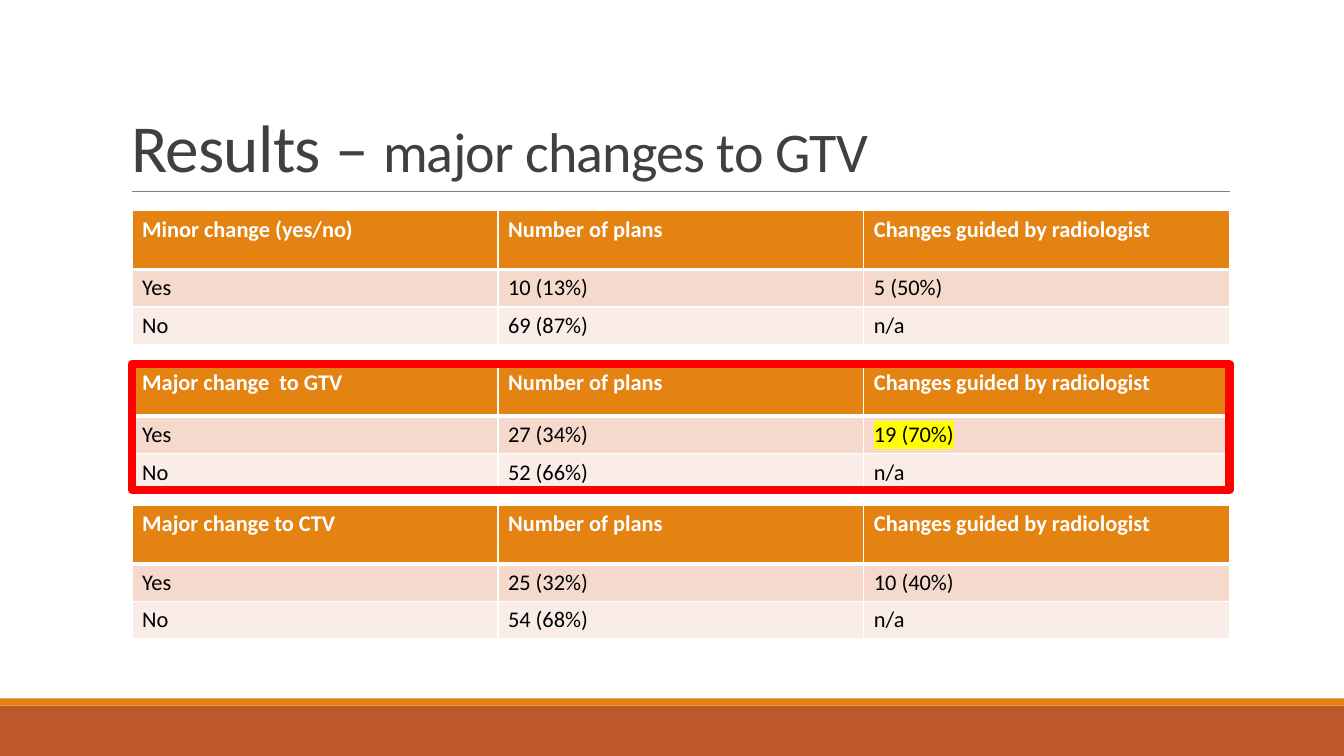
"""Build the results slide on major changes to GTV."""
from lxml import etree
from pptx import Presentation
from pptx.dml.color import RGBColor
from pptx.enum.shapes import MSO_CONNECTOR, MSO_SHAPE
from pptx.enum.text import MSO_ANCHOR, MSO_AUTO_SIZE, PP_ALIGN
from pptx.oxml.ns import qn
from pptx.util import Cm, Pt

RECT = MSO_SHAPE.RECTANGLE
STRAIGHT = MSO_CONNECTOR.STRAIGHT
BOTTOM = MSO_ANCHOR.BOTTOM
NO_AUTOFIT = MSO_AUTO_SIZE.NONE
LEFT = PP_ALIGN.LEFT

ORANGE, RUST, RED, WHITE = "E48312", "BD582C", "FF0000", "FFFFFF"
ROW_FILLS = [ORANGE, "F5D9CC", "FAEDE7"]
TABLE_LEFT, COL_W, ROW_H = 3.33, 9.22, 0.94
TABLE_W = 3 * COL_W
GTV_TOP, GTV_H = 9.17, 3.18
HEADINGS = ["Number of plans", "Changes guided by radiologist"]
TABLES = [
    ("Minor change (yes/no)", 5.31, 1.48, ["10 (13%)", "5 (50%)"], "69 (87%)"),
    ("Major change  to GTV", GTV_TOP, 1.32, ["27 (34%)", "19 (70%)"], "52 (66%)"),
    ("Major change to CTV", 12.73, 1.48, ["25 (32%)", "10 (40%)"], "54 (68%)"),
]
HIGHLIGHTED = "19 (70%)"


def rgb(color):
    return RGBColor.from_string(color)


def add_color(parent, color):
    etree.SubElement(parent, qn("a:srgbClr"), val=color)


prs = Presentation()
prs.slide_width, prs.slide_height = Cm(33.87), Cm(19.05)
s = prs.slides.add_slide(prs.slide_layouts[5])

for top, height, color in [(17.78, 1.27, RUST), (17.6, 0.18, ORANGE)]:
    sp = s.shapes.add_shape(RECT, 0, Cm(top), prs.slide_width, Cm(height))
    sp.shadow.inherit = False
    sp.fill.solid()
    sp.fill.fore_color.rgb = rgb(color)
    sp.line.fill.background()

rule = s.shapes.add_connector(STRAIGHT, Cm(TABLE_LEFT), Cm(4.83), Cm(TABLE_LEFT + TABLE_W), Cm(4.83))
rule.line.color.rgb = rgb("808080")
rule.line.width = Pt(0.5)
etree.SubElement(rule._element.spPr, qn("a:effectLst"))

title = s.shapes.title
title.left, title.top, title.width, title.height = Cm(3.05), Cm(0.79), Cm(27.94), Cm(4.04)
tf = title.text_frame
for name, value in {"vertical_anchor": BOTTOM, "auto_size": NO_AUTOFIT, "word_wrap": True}.items():
    setattr(tf, name, value)
p = tf.paragraphs[0]
p.alignment, p.line_spacing = LEFT, 0.85
for text, size in [("Results – ", 48), ("major changes to GTV", 40)]:
    r = p.add_run()
    r.text = text
    for name, value in {"name": "Calibri", "size": Pt(size)}.items():
        setattr(r.font, name, value)
    r.font.color.rgb = rgb("404040")
    r._r.get_or_add_rPr().set("spc", "-50")

for heading, top, head_h, yes, no in TABLES:
    rows = [[heading, *HEADINGS], ["Yes", *yes], ["No", no, "n/a"]]
    heights = [head_h, ROW_H, ROW_H]
    table = s.shapes.add_table(3, 3, Cm(TABLE_LEFT), Cm(top), Cm(TABLE_W), Cm(sum(heights))).table
    for col in table.columns:
        col.width = Cm(COL_W)
    for i, (texts, height) in enumerate(zip(rows, heights)):
        table.rows[i].height = Cm(height)
        is_head = i == 0
        for j, text in enumerate(texts):
            cell = table.cell(i, j)
            cell.fill.solid()
            cell.fill.fore_color.rgb = rgb(ROW_FILLS[i])
            r = cell.text_frame.paragraphs[0].add_run()
            r.text = text
            for name, value in {"name": "Calibri", "size": Pt(16), "bold": is_head}.items():
                setattr(r.font, name, value)
            r.font.color.rgb = rgb(WHITE if is_head else "000000")
            if text == HIGHLIGHTED:
                highlight = etree.Element(qn("a:highlight"))
                add_color(highlight, "FFFF00")
                r.font._element.find(qn("a:solidFill")).addnext(highlight)
            widths = {"L": 1, "R": 1, "T": 3 if i == 1 else 1, "B": 3 if is_head else 1}
            for k, (side, width) in enumerate(widths.items()):
                ln = etree.Element(qn(f"a:ln{side}"), w=str(Pt(width)))
                add_color(etree.SubElement(ln, qn("a:solidFill")), WHITE)
                cell._tc.get_or_add_tcPr().insert(k, ln)

frame = s.shapes.add_shape(RECT, Cm(TABLE_LEFT), Cm(GTV_TOP), Cm(TABLE_W), Cm(GTV_H))
frame.shadow.inherit = False
frame.fill.background()
frame.line.color.rgb = rgb(RED)
frame.line.width = Pt(6)
etree.SubElement(frame.line._get_or_add_ln(), qn("a:round"))

prs.save("out.pptx")
